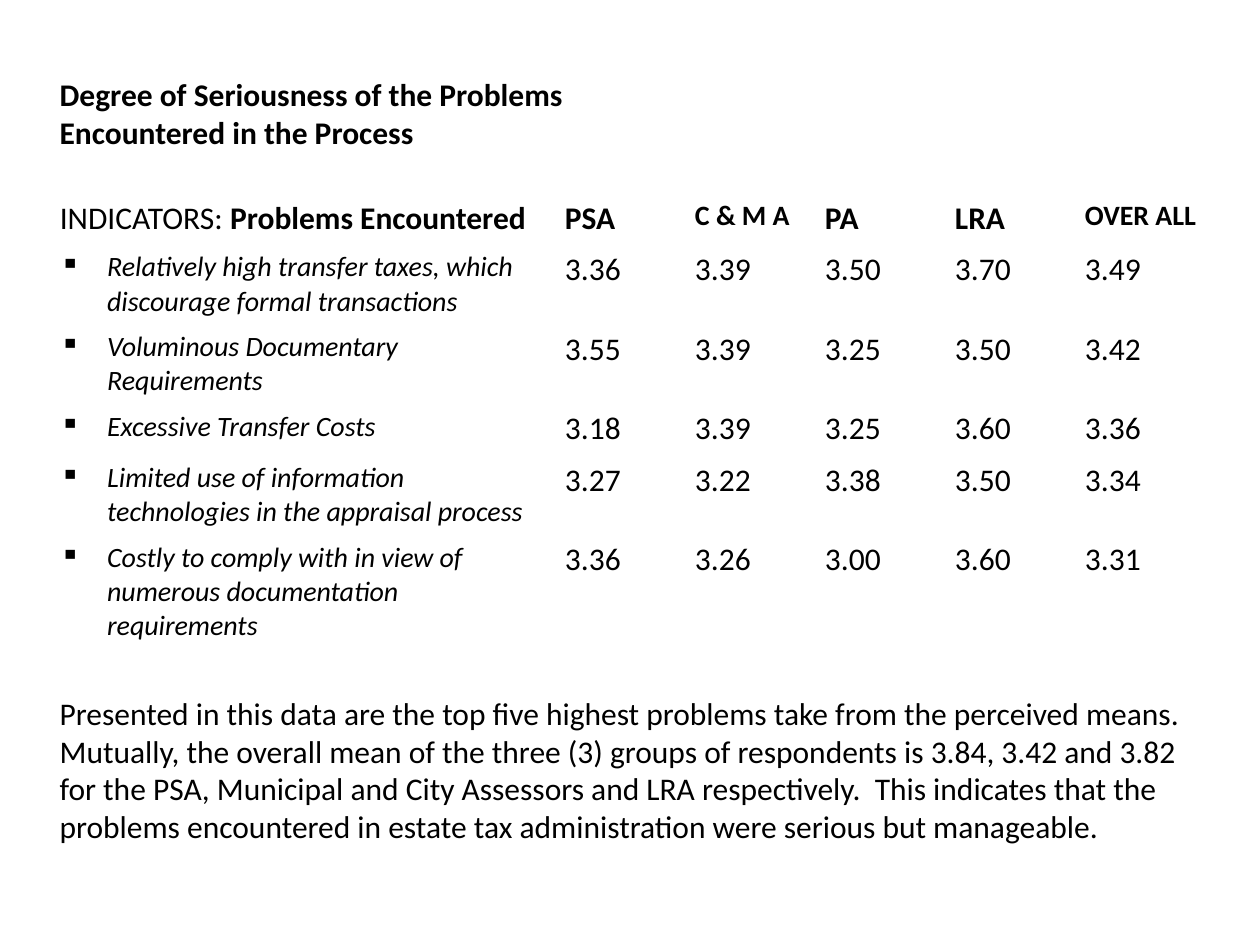
from lxml import etree
from pptx import Presentation
from pptx.dml.color import RGBColor
from pptx.enum.text import MSO_AUTO_SIZE
from pptx.oxml.ns import qn
from pptx.util import Pt

BLACK = RGBColor(0, 0, 0)
FONT = "Calibri"
FIT_SHAPE = MSO_AUTO_SIZE.SHAPE_TO_FIT_TEXT
BODY, SMALL = 18, 16

# Content
TITLE = "Degree of Seriousness of the Problems Encountered in the Process"
INDICATOR_HEADING = ("INDICATORS: ", "Problems Encountered")
GROUPS = [("PSA", BODY), ("C & M A", SMALL), ("PA", BODY), ("LRA", BODY), ("OVER ALL", SMALL)]
PROBLEMS = [
    ("Relatively high transfer taxes, which discourage formal transactions",
     ["3.36", "3.39", "3.50", "3.70", "3.49"]),
    ("Voluminous Documentary Requirements", ["3.55", "3.39", "3.25", "3.50", "3.42"]),
    ("Excessive Transfer Costs", ["3.18", "3.39", "3.25", "3.60", "3.36"]),
    ("Limited use of information technologies in the appraisal process",
     ["3.27", "3.22", "3.38", "3.50", "3.34"]),
    ("Costly to comply with in view of numerous documentation requirements",
     ["3.36", "3.26", "3.00", "3.60", "3.31"]),
]
SUMMARY = (
    "Presented in this data are the top five highest problems take from the perceived means.  "
    "Mutually, the overall mean of the three (3) groups of respondents is 3.84, 3.42 and 3.82 "
    "for the PSA, Municipal and City Assessors and LRA respectively.  This indicates that the "
    "problems encountered in estate tax administration were serious but manageable."
)

# Layout in points
LEFT, WIDTH = 27, 669.6
TITLE_TOP, TITLE_WIDTH, TITLE_HEIGHT = 39.4, 360, 50.9
TABLE_TOP, ROW_HEIGHT = 110.2, 29.2
COLUMN_WIDTHS = [288.6] + [74.3] * 4 + [83.8]
SUMMARY_TOP, SUMMARY_HEIGHT = 393, 94.5
BULLET_INDENT = 27


def add_span(para, text, size=BODY, bold=False, italic=False):
    span = para.add_run()
    span.text = text
    font = span.font
    font.name, font.size, font.bold, font.italic = FONT, Pt(size), bold, italic
    font.color.rgb = BLACK


def add_text(page, text, top, width, height, bold=False):
    box = page.shapes.add_textbox(Pt(LEFT), Pt(top), Pt(width), Pt(height))
    box.text_frame.word_wrap = True
    box.text_frame.auto_size = FIT_SHAPE
    add_span(box.text_frame.paragraphs[0], text, bold=bold)


def add_bullet(para):
    properties = para._p.get_or_add_pPr()
    properties.set("marL", str(Pt(BULLET_INDENT)))
    properties.set("indent", str(-Pt(BULLET_INDENT)))
    etree.SubElement(properties, qn("a:buChar")).set("char", "▪")


def add_ratings(page):
    frame = page.shapes.add_table(
        len(PROBLEMS) + 1, len(COLUMN_WIDTHS), Pt(LEFT), Pt(TABLE_TOP),
        Pt(WIDTH), Pt(ROW_HEIGHT * (len(PROBLEMS) + 1)))
    table = frame.table
    table.first_row = table.horz_banding = False
    for column, width in zip(table.columns, COLUMN_WIDTHS):
        column.width = Pt(width)
    for cell in table.iter_cells():
        cell.fill.background()

    def cell_para(row, column):
        return table.cell(row, column).text_frame.paragraphs[0]

    # Heading row
    label, subject = INDICATOR_HEADING
    add_span(cell_para(0, 0), label)
    add_span(cell_para(0, 0), subject, bold=True)
    for column, (group, size) in enumerate(GROUPS, 1):
        add_span(cell_para(0, column), group, size, bold=True)

    # One row per problem
    for row, (problem, means) in enumerate(PROBLEMS, 1):
        add_bullet(cell_para(row, 0))
        add_span(cell_para(row, 0), problem, SMALL, italic=True)
        for column, mean in enumerate(means, 1):
            add_span(cell_para(row, column), mean)


def main():
    deck = Presentation()
    deck.slide_width, deck.slide_height = Pt(720), Pt(540)
    page = deck.slides.add_slide(deck.slide_layouts[6])
    add_text(page, TITLE, TITLE_TOP, TITLE_WIDTH, TITLE_HEIGHT, bold=True)
    add_ratings(page)
    add_text(page, SUMMARY, SUMMARY_TOP, WIDTH, SUMMARY_HEIGHT)
    deck.save("out.pptx")


if __name__ == "__main__":
    main()
